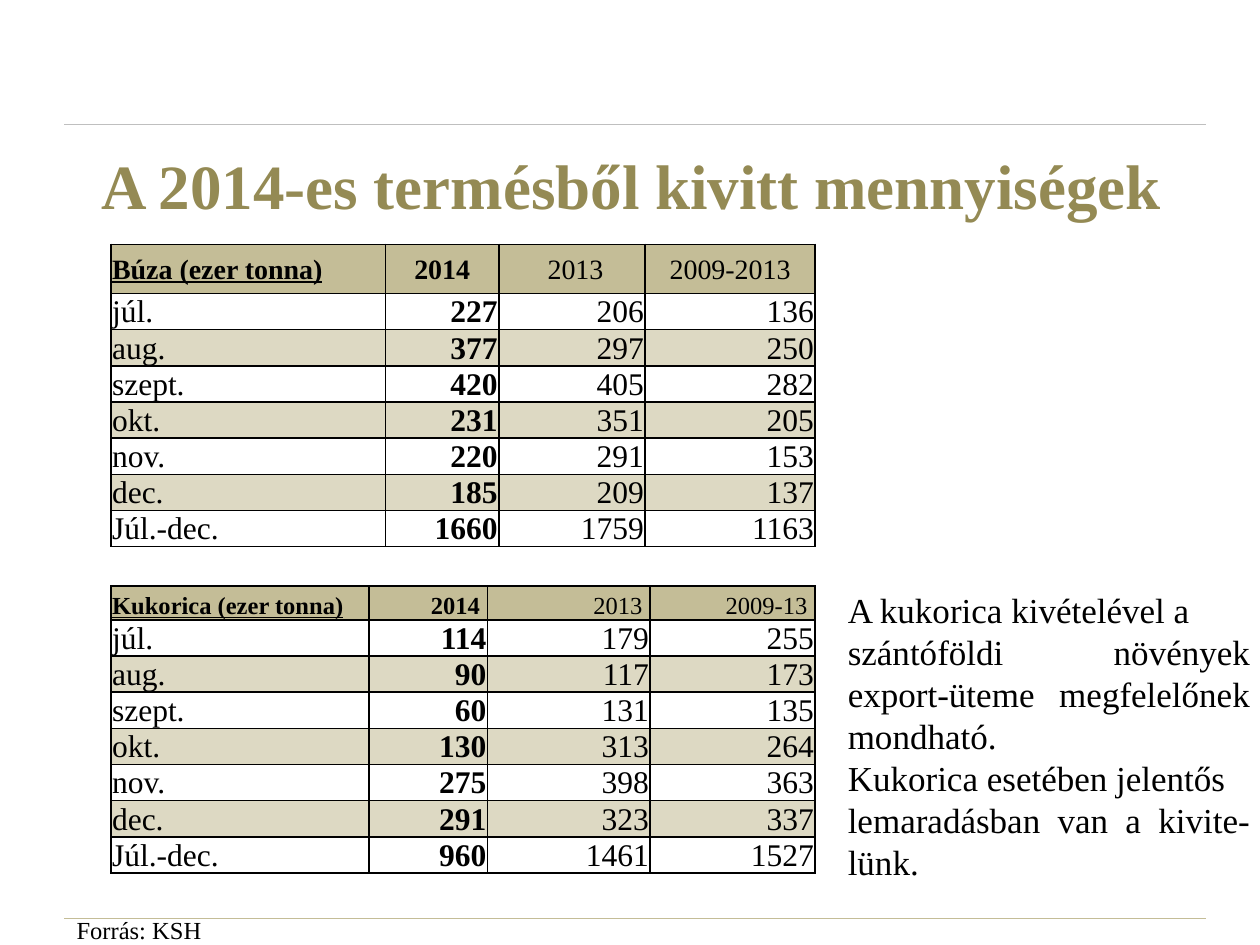
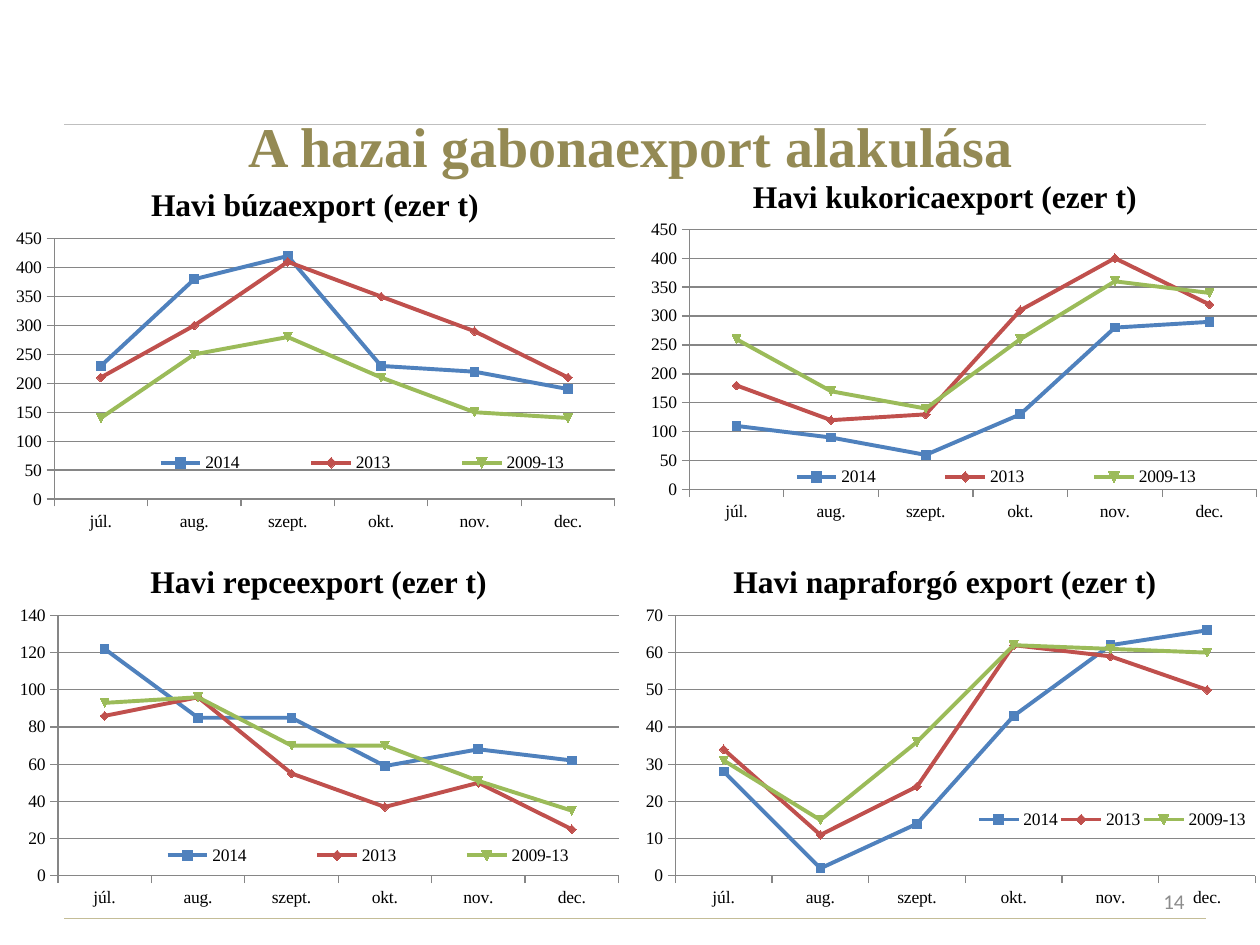
from pptx import Presentation
from pptx.chart.data import CategoryChartData
from pptx.dml.color import RGBColor
from pptx.enum.chart import XL_CHART_TYPE, XL_LEGEND_POSITION, XL_TICK_MARK
from pptx.enum.shapes import MSO_CONNECTOR
from pptx.enum.text import MSO_ANCHOR, MSO_AUTO_SIZE, PP_ALIGN
from pptx.oxml import parse_xml
from pptx.oxml.ns import nsdecls, qn
from pptx.util import Inches, Pt

LINE_MARKERS = XL_CHART_TYPE.LINE_MARKERS
LEGEND_RIGHT = XL_LEGEND_POSITION.RIGHT
TICK_OUTSIDE = XL_TICK_MARK.OUTSIDE
STRAIGHT = MSO_CONNECTOR.STRAIGHT
MIDDLE, BOTTOM = MSO_ANCHOR.MIDDLE, MSO_ANCHOR.BOTTOM
NO_AUTOFIT = MSO_AUTO_SIZE.NONE
LEFT, CENTER, RIGHT, JUSTIFY = PP_ALIGN.LEFT, PP_ALIGN.CENTER, PP_ALIGN.RIGHT, PP_ALIGN.JUSTIFY

SERIF = "Times New Roman"
COLORS = {
    "title": "948A54", "top rule": "BFBFBF", "bottom rule": "C4BD97",
    "header": "C4BD97", "band": "DDD9C3",
    "text": "000000", "number": "8C8C8C", "axis": "868686",
}
SERIES_COLORS = ["4F81BD", "C0504D", "9BBB59"]
RULES = [("top rule", 0.99, 0.75), ("bottom rule", 7.29, 1)]

MONTHS = ["júl.", "aug.", "szept.", "okt.", "nov.", "dec."]
YEARS = ["2014", "2013", "2009-13"]
TOTAL_LABEL = "Júl.-dec."

# Monthly exports in thousand tonnes, one list for each of YEARS
EXPORTS = {
    "wheat": [[227, 377, 420, 231, 220, 185],
              [206, 297, 405, 351, 291, 209],
              [136, 250, 282, 205, 153, 137]],
    "corn": [[114, 90, 60, 130, 275, 291],
             [179, 117, 131, 313, 398, 323],
             [255, 173, 135, 264, 363, 337]],
    "rapeseed": [[122, 85, 85, 59, 68, 62],
                 [86, 96, 55, 37, 50, 25],
                 [93, 96, 70, 70, 51, 35]],
    "sunflower": [[28, 2, 14, 43, 62, 66],
                  [34, 11, 24, 62, 59, 50],
                  [31, 15, 36, 62, 61, 60]],
}

TABLES = [
    {"crop": "wheat", "header": ["Búza (ezer tonna)", "2014", " 2013", "2009-2013"],
     "totals": [1660, 1759, 1163], "top": 1.94, "columns": [2.18, 0.9, 1.16, 1.35],
     "header_height": 0.39, "row_height": 0.25, "header_size": 16,
     "header_anchor": MIDDLE, "header_align": CENTER, "header_inset": 0.01},
    {"crop": "corn", "header": ["Kukorica (ezer tonna)"] + YEARS,
     "totals": [960, 1461, 1527], "top": 4.65, "columns": [2.05, 0.94, 1.29, 1.31],
     "header_height": 0.27, "row_height": 0.27, "header_size": 14,
     "header_anchor": BOTTOM, "header_align": RIGHT, "header_inset": 0.06},
]
TABLE_LEFT = 0.88

COMMENTS = [
    "A kukorica kivételével a",
    "szántóföldi növények export-üteme megfelelőnek mondható.",
    "Kukorica esetében jelentős",
    "lemaradásban van a kivite-lünk.",
]

# Plot and legend are left, top, width, height as shares of the chart;
# values are rounded to the given step
CHART_SIZE = (5, 3)
CHARTS = [
    {"crop": "sunflower", "title": "Havi napraforgó export (ezer t)", "at": (5, 4.3),
     "scale": (70, 10), "step": 1, "plot": (0.072, 0.195, 0.921, 0.689),
     "legend": (0.548, 0.69, 0.435, 0.09)},
    {"crop": "rapeseed", "title": "Havi repceexport (ezer t)", "at": (0.03, 4.3),
     "scale": (140, 20), "step": 1, "plot": (0.086, 0.195, 0.89, 0.689),
     "legend": (0.157, 0.785, 0.865, 0.09)},
    {"crop": "corn", "title": "Havi kukoricaexport (ezer t)", "at": (5, 1.25),
     "scale": (450, 50), "step": 10, "plot": (0.094, 0.19, 0.901, 0.689),
     "legend": (0.163, 0.8, 0.885, 0.09)},
    {"crop": "wheat", "title": "Havi búzaexport (ezer t)", "at": (0, 1.31),
     "scale": (450, 50), "step": 10, "plot": (0.086, 0.195, 0.89, 0.689),
     "legend": (0.15, 0.743, 0.863, 0.09)},
]


def rgb(name):
    return RGBColor.from_string(COLORS[name])


def style_font(font, size, color="text", bold=False, name=SERIF):
    font.name, font.size, font.bold = name, Pt(size), bold
    font.color.rgb = rgb(color)


def style_paragraphs(frame, align, size, **font_options):
    for para in frame.paragraphs:
        para.alignment = align
        for span in para.runs:
            style_font(span.font, size, **font_options)


def move_rules_to_layout(slide, layout):
    """Draw the two shared rules and hand them to the layout."""
    for color, y, width in RULES:
        rule = slide.shapes.add_connector(
            STRAIGHT, Inches(0.51), Inches(y), Inches(9.57), Inches(y))
        rule.line.color.rgb = rgb(color)
        rule.line.width = Pt(width)
        rule.element.spPr.append(parse_xml(f"<a:effectLst {nsdecls('a')}/>"))
        layout.shapes.element.append(rule.element)


def set_title(slide, text, top, height, size):
    title = slide.shapes.title
    title.left, title.top = Inches(0.51), Inches(top)
    title.width, title.height = Inches(9), Inches(height)
    frame = title.text_frame
    frame.text = text
    frame.auto_size = NO_AUTOFIT
    frame.vertical_anchor = MIDDLE
    style_paragraphs(frame, CENTER, size, color="title", bold=True)


def add_text(slide, area, text, align, size, wrap=True, **font_options):
    box = slide.shapes.add_textbox(*map(Inches, area))
    frame = box.text_frame
    frame.word_wrap = wrap
    frame.text = text
    style_paragraphs(frame, align, size, **font_options)
    return frame


def add_borders(cell):
    properties = cell._tc.get_or_add_tcPr()
    for index, side in enumerate("LRTB"):
        properties.insert(index, parse_xml(
            f'<a:ln{side} {nsdecls("a")} w="{Pt(1)}"><a:solidFill>'
            f'<a:srgbClr val="{COLORS["text"]}"/></a:solidFill></a:ln{side}>'))


def format_cell(cell, row, column, info):
    is_header = row == 0
    is_label = column == 0
    cell.margin_left = cell.margin_top = Inches(0.01)
    cell.margin_right = Inches(info["header_inset"] if is_header else 0.01)
    cell.margin_bottom = 0
    cell.vertical_anchor = info["header_anchor"] if is_header else BOTTOM
    align = LEFT if is_label else info["header_align"] if is_header else RIGHT
    bold = column == 1 or (is_header and is_label)
    style_paragraphs(cell.text_frame, align, info["header_size"] if is_header else 18, bold=bold)
    if is_header or row % 2 == 0:
        cell.fill.solid()
        cell.fill.fore_color.rgb = rgb("header" if is_header else "band")
    else:
        cell.fill.background()
    add_borders(cell)


def add_export_table(slide, info):
    rows = [info["header"], *zip(MONTHS, *EXPORTS[info["crop"]]),
            [TOTAL_LABEL, *info["totals"]]]
    widths = info["columns"]
    heights = [info["header_height"]] + [info["row_height"]] * (len(rows) - 1)
    table = slide.shapes.add_table(
        len(rows), len(widths), Inches(TABLE_LEFT), Inches(info["top"]),
        Inches(sum(widths)), Inches(sum(heights))).table
    table.first_row = table.horz_banding = False
    for column, width in zip(table.columns, widths):
        column.width = Inches(width)
    for row, height in zip(table.rows, heights):
        row.height = Inches(height)
    for r, values in enumerate(rows):
        for c, value in enumerate(values):
            cell = table.cell(r, c)
            cell.text = str(value)
            format_cell(cell, r, c, info)
    table.cell(0, 0).text_frame.paragraphs[0].runs[0].font.underline = True


def set_layout(part, index, shares, target=""):
    """Place a chart part by shares of the chart's size."""
    for old in part.findall(qn("c:layout")):
        part.remove(old)
    modes = '<c:xMode val="edge"/><c:yMode val="edge"/>'
    places = "".join(f'<c:{key} val="{share}"/>' for key, share in zip("xywh", shares))
    part.insert(index, parse_xml(
        f'<c:layout {nsdecls("c")}><c:manualLayout>{target}{modes}{places}'
        "</c:manualLayout></c:layout>"))


def round_half_up(value, step):
    return (value + step // 2) // step * step


def add_export_chart(slide, info):
    data = CategoryChartData()
    data.categories = MONTHS
    for year, values in zip(YEARS, EXPORTS[info["crop"]]):
        data.add_series(year, [round_half_up(value, info["step"]) for value in values])
    chart = slide.shapes.add_chart(
        LINE_MARKERS, *map(Inches, info["at"] + CHART_SIZE), data).chart
    style_font(chart.font, 10)

    chart.has_title = True
    chart.chart_title.include_in_layout = False
    chart.chart_title.text_frame.text = info["title"]
    style_paragraphs(chart.chart_title.text_frame, CENTER, 18, bold=True)

    chart.has_legend = True
    chart.legend.position = LEGEND_RIGHT
    chart.legend.include_in_layout = False
    set_layout(chart.element.find(".//" + qn("c:legend")), 1, info["legend"])
    set_layout(chart.element.find(".//" + qn("c:plotArea")), 0, info["plot"],
               '<c:layoutTarget val="inner"/>')

    value_axis = chart.value_axis
    value_axis.minimum_scale = 0
    value_axis.maximum_scale, value_axis.major_unit = info["scale"]
    value_axis.has_major_gridlines = True
    for axis in (chart.category_axis, value_axis):
        axis.major_tick_mark = TICK_OUTSIDE
    for line in (chart.category_axis.format.line, value_axis.format.line,
                 value_axis.major_gridlines.format.line):
        line.color.rgb = rgb("axis")
        line.width = Pt(0.75)

    chart.plots[0].vary_by_categories = False
    for series, color in zip(chart.plots[0].series, SERIES_COLORS):
        series.smooth = False
        series.format.line.color.rgb = RGBColor.from_string(color)
        series.format.line.width = Pt(2.25)


def main():
    deck = Presentation()
    deck.slide_width, deck.slide_height = Inches(10), Inches(7.5)
    layout = deck.slide_layouts.get_by_name("Title Only")

    quantities = deck.slides.add_slide(layout)
    move_rules_to_layout(quantities, layout)
    set_title(quantities, "A 2014-es termésből kivitt mennyiségek", 1.07, 0.79, 36)
    for info in TABLES:
        add_export_table(quantities, info)
    add_text(quantities, (6.63, 4.62, 3.39, 2.46), "\n".join(COMMENTS), JUSTIFY, 20)
    add_text(quantities, (0.51, 7.21, 1.2, 0.34), "Forrás: KSH", LEFT, 14, wrap=False)

    trends = deck.slides.add_slide(layout)
    set_title(trends, "A hazai gabonaexport alakulása", 0.91, 0.48, 32)
    number = add_text(trends, (7.17, 6.95, 2.33, 0.4), "14", RIGHT, 12,
                      color="number", name="Calibri")
    number.vertical_anchor = MIDDLE
    for info in CHARTS:
        add_export_chart(trends, info)

    deck.save("out.pptx")


if __name__ == "__main__":
    main()
